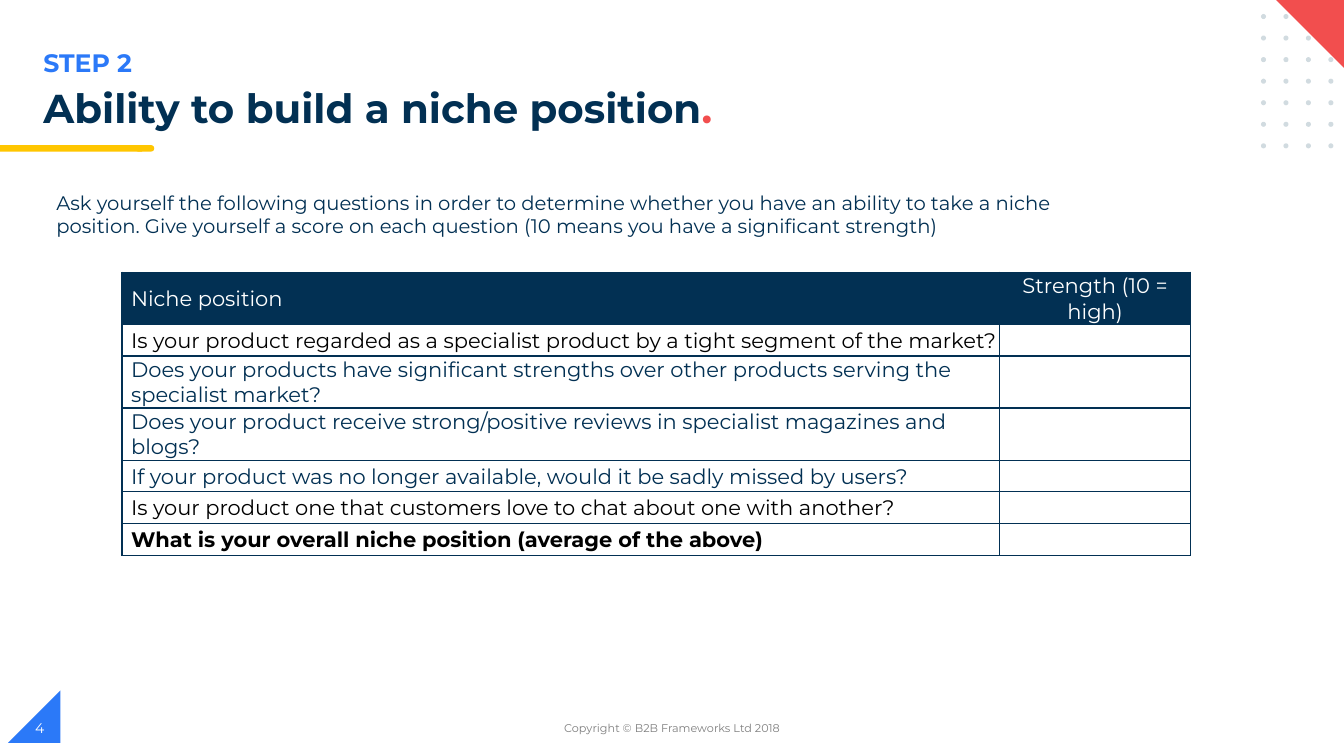
from dataclasses import dataclass
from itertools import product

from lxml import etree
from pptx import Presentation
from pptx.dml.color import RGBColor
from pptx.enum.shapes import MSO_SHAPE
from pptx.enum.text import MSO_ANCHOR, MSO_AUTO_SIZE, PP_ALIGN
from pptx.oxml.ns import qn
from pptx.slide import Slide
from pptx.table import _Cell
from pptx.text.text import TextFrame, _Paragraph
from pptx.util import Pt

RIGHT_TRIANGLE = MSO_SHAPE.RIGHT_TRIANGLE
OVAL = MSO_SHAPE.OVAL
RECTANGLE = MSO_SHAPE.RECTANGLE
TERMINATOR = MSO_SHAPE.FLOWCHART_TERMINATOR
LEFT, CENTER = PP_ALIGN.LEFT, PP_ALIGN.CENTER
TOP, MIDDLE, BOTTOM = MSO_ANCHOR.TOP, MSO_ANCHOR.MIDDLE, MSO_ANCHOR.BOTTOM

NAVY = RGBColor(0x02, 0x30, 0x53)
BLUE = RGBColor(0x2B, 0x79, 0xF8)
RED = RGBColor(0xF2, 0x4E, 0x4E)
YELLOW = RGBColor(0xFF, 0xC6, 0x00)
PALE = RGBColor(0xD1, 0xDB, 0xE0)
GRAY = RGBColor(0x7F, 0x7F, 0x7F)
WHITE = RGBColor(0xFF, 0xFF, 0xFF)
BLACK = RGBColor(0x00, 0x00, 0x00)
FONT = "Montserrat"


@dataclass(frozen=True)
class Box:
    left: float
    top: float
    width: float
    height: float

    def lengths(self) -> tuple[Pt, Pt, Pt, Pt]:
        return Pt(self.left), Pt(self.top), Pt(self.width), Pt(self.height)


@dataclass(frozen=True)
class Decoration:
    kind: MSO_SHAPE
    box: Box
    color: RGBColor
    rotation: int = 0


@dataclass(frozen=True)
class Label:
    text: str
    box: Box
    size: float
    color: RGBColor
    bold: bool = False
    align: PP_ALIGN = LEFT
    anchor: MSO_ANCHOR = TOP


@dataclass(frozen=True)
class Question:
    text: str
    color: RGBColor
    height: float
    bold: bool = False


ONE_LINE, TWO_LINES = 22.6, 37.2
DOT_LEFT, DOT_TOP, DOT_SIZE = 900.7, 10, 3.6
DOT_STEP_X, DOT_STEP_Y = 16.05, 15.4
DOT_COLUMNS, DOT_ROWS = 4, 7

DOTS = [
    Decoration(OVAL, Box(DOT_LEFT + column * DOT_STEP_X, DOT_TOP + row * DOT_STEP_Y,
                         DOT_SIZE, DOT_SIZE), PALE)
    for row, column in product(range(DOT_ROWS), range(DOT_COLUMNS))
]
DECORATIONS = [
    Decoration(RIGHT_TRIANGLE, Box(5.8, 493.2, 37.4, 37.4), BLUE, 270),
    *DOTS,
    Decoration(RIGHT_TRIANGLE, Box(910.8, -0.7, 51.8, 51.8), RED, 180),
    Decoration(TERMINATOR, Box(96.5, 103.7, 13.7, 4.6), YELLOW),
    Decoration(RECTANGLE, Box(0, 103.7, 101.5, 4.6), YELLOW),
]

TITLE_BOX = Box(23.8, 59, 630.7, 40.3)
LABELS = [
    Label("STEP 2", Box(23.8, 30.2, 481.7, 28.8), 18, BLUE, bold=True),
    Label("Ask yourself the following questions in order to determine whether you "
          "have an ability to take a niche position. Give yourself a score on each "
          "question (10 means you have a significant strength)",
          Box(33.1, 132.5, 733, 41), 14, NAVY),
    Label("Copyright © B2B Frameworks Ltd 2018", Box(318.2, 505.4, 324, 28.8),
          8, GRAY, align=CENTER, anchor=MIDDLE),
    Label("4", Box(18, 505.4, 216, 28.8), 10, WHITE, anchor=MIDDLE),
]

COLUMN_WIDTHS = (627.1, 136.1)
HEADER = Question("Niche position", WHITE, TWO_LINES)
QUESTIONS = [
    Question("Is your product regarded as a specialist product by a tight segment "
             "of the market?", BLACK, ONE_LINE),
    Question("Does your products have significant strengths over other products "
             "serving the specialist market?", NAVY, TWO_LINES),
    Question("Does your product receive strong/positive reviews in specialist "
             "magazines and blogs?", NAVY, TWO_LINES),
    Question("If your product was no longer available, would it be sadly missed "
             "by users?", NAVY, ONE_LINE),
    Question("Is your product one that customers love to chat about one with "
             "another?", BLACK, ONE_LINE),
    Question("What is your overall niche position (average of the above)", BLACK,
             ONE_LINE, bold=True),
]


def add_run(paragraph: _Paragraph, text: str, size: float, color: RGBColor,
            bold: bool = False) -> None:
    run = paragraph.add_run()
    run.text = text
    run.font.name = FONT
    run.font.size = Pt(size)
    run.font.bold = bold
    run.font.color.rgb = color


def set_frame(frame: TextFrame, anchor: MSO_ANCHOR) -> None:
    frame.word_wrap = True
    frame.auto_size = MSO_AUTO_SIZE.NONE
    frame.vertical_anchor = anchor


def add_decoration(slide: Slide, decoration: Decoration) -> None:
    shape = slide.shapes.add_shape(decoration.kind, *decoration.box.lengths())
    shape.rotation = decoration.rotation
    shape.shadow.inherit = False
    shape.fill.solid()
    shape.fill.fore_color.rgb = decoration.color
    shape.line.fill.background()


def add_label(slide: Slide, label: Label) -> None:
    frame = slide.shapes.add_textbox(*label.box.lengths()).text_frame
    set_frame(frame, label.anchor)
    paragraph = frame.paragraphs[0]
    paragraph.alignment = label.align
    add_run(paragraph, label.text, label.size, label.color, label.bold)


def fill_title(slide: Slide) -> None:
    title = slide.shapes.title
    title.left, title.top, title.width, title.height = TITLE_BOX.lengths()
    set_frame(title.text_frame, MIDDLE)
    paragraph = title.text_frame.paragraphs[0]
    paragraph.alignment = LEFT
    paragraph.line_spacing = 0.9
    add_run(paragraph, "Ability to build a niche position", 28.8, NAVY, bold=True)
    add_run(paragraph, ".", 28.8, RED, bold=True)


def style_cell(cell: _Cell, is_header: bool) -> None:
    """Set margins, navy borders and the fill of a cell."""
    cell.margin_left = cell.margin_right = cell.margin_top = Pt(0.7)
    cell.margin_bottom = 0
    properties = cell._tc.get_or_add_tcPr()
    for side in ("a:lnL", "a:lnR", "a:lnT", "a:lnB"):
        border = etree.SubElement(properties, qn(side), w=str(Pt(1)))
        solid = etree.SubElement(border, qn("a:solidFill"))
        etree.SubElement(solid, qn("a:srgbClr"), val=str(NAVY))
    if is_header:
        cell.fill.solid()
        cell.fill.fore_color.rgb = NAVY
    else:
        cell.fill.background()


def add_score_table(slide: Slide) -> None:
    rows = [HEADER, *QUESTIONS]
    box = Box(87.1, 194.4, sum(COLUMN_WIDTHS), sum(row.height for row in rows))
    table = slide.shapes.add_table(len(rows), len(COLUMN_WIDTHS), *box.lengths()).table
    table.first_row = table.horz_banding = False
    for column, width in zip(table.columns, COLUMN_WIDTHS):
        column.width = Pt(width)
    for index, question in enumerate(rows):
        table.rows[index].height = Pt(question.height)
        for cell in table.rows[index].cells:
            style_cell(cell, index == 0)
        wording = table.cell(index, 0)
        wording.margin_left = Pt(6.5)
        wording.vertical_anchor = MIDDLE
        add_run(wording.text_frame.paragraphs[0], question.text, 15, question.color,
                question.bold)
    strength = table.cell(0, 1)
    strength.vertical_anchor = BOTTOM
    strength.text_frame.paragraphs[0].alignment = CENTER
    add_run(strength.text_frame.paragraphs[0], "Strength (10 = high)", 15, WHITE)


def main() -> None:
    deck = Presentation()
    deck.slide_width, deck.slide_height = Pt(960), Pt(540)
    slide = deck.slides.add_slide(deck.slide_layouts.get_by_name("Title Only"))
    for decoration in DECORATIONS:
        add_decoration(slide, decoration)
    fill_title(slide)
    for label in LABELS:
        add_label(slide, label)
    add_score_table(slide)
    deck.save("out.pptx")


if __name__ == "__main__":
    main()
